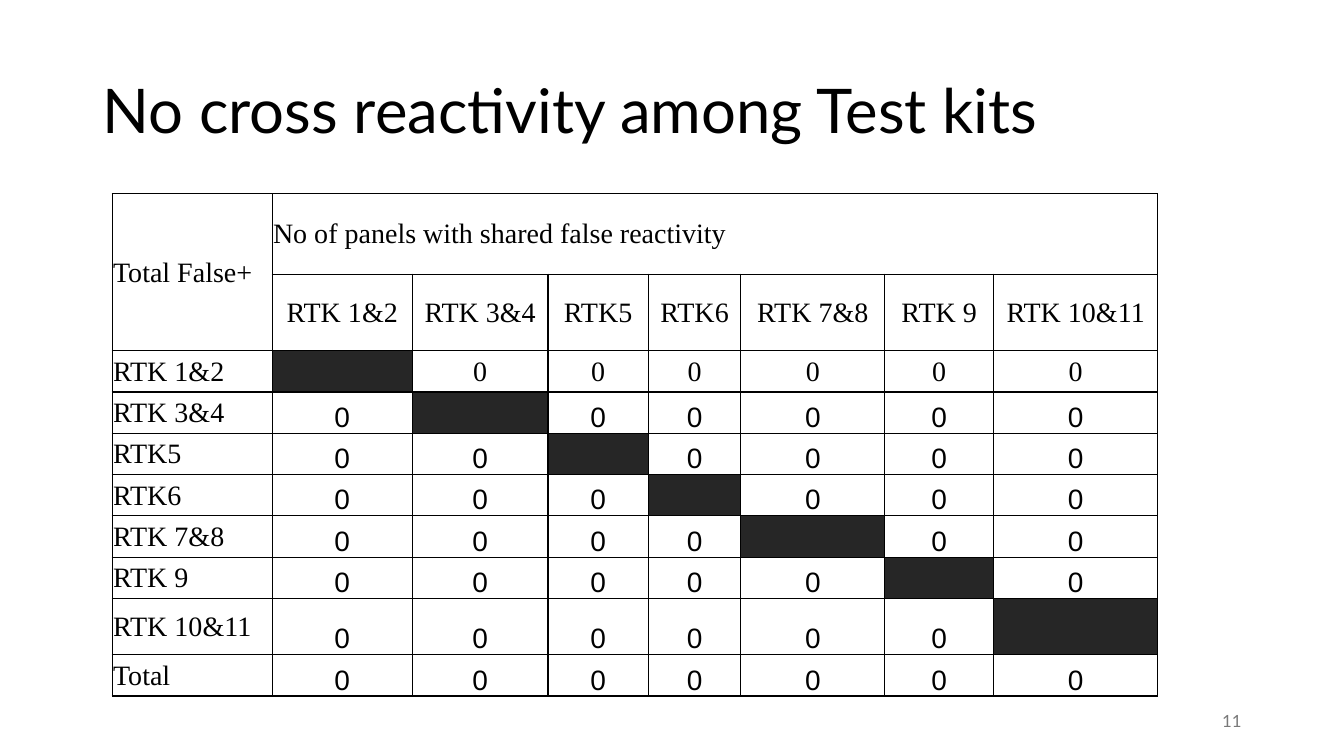
from dataclasses import dataclass
from lxml.etree import SubElement
from pptx import Presentation
from pptx.dml.color import RGBColor
from pptx.enum.text import MSO_ANCHOR, PP_ALIGN
from pptx.oxml.ns import qn
from pptx.util import Cm, Pt

TITLE = "No cross reactivity among Test kits"
CORNER = "Total False+"
SPAN = "No of panels with shared false reactivity"
KITS = ["RTK 1&2", "RTK 3&4", "RTK5", "RTK6", "RTK 7&8", "RTK 9", "RTK 10&11"]
# One row of counts per kit; None marks a kit against itself.
COUNTS = [
    (None, 0, 0, 0, 0, 0, 0),
    (0, None, 0, 0, 0, 0, 0),
    (0, 0, None, 0, 0, 0, 0),
    (0, 0, 0, None, 0, 0, 0),
    (0, 0, 0, 0, None, 0, 0),
    (0, 0, 0, 0, 0, None, 0),
    (0, 0, 0, 0, 0, 0, None),
]
TOTALS = (0, 0, 0, 0, 0, 0, 0)
PAGE = "11"

WIDTHS = [4.03, 3.53, 3.42, 2.53, 2.33, 3.63, 2.74, 4.14]
HEIGHTS = [2.03, 1.93] + [1.04] * 6 + [1.42, 1.04]


@dataclass(frozen=True)
class Theme:
    ink: RGBColor = RGBColor(0, 0, 0)
    paper: RGBColor = RGBColor(255, 255, 255)
    block: RGBColor = RGBColor(0x26, 0x26, 0x26)
    muted: RGBColor = RGBColor(0x79, 0x79, 0x79)
    head: str = "Lato"
    label: str = "Times New Roman"
    count: str = "Arial"
    big: Pt = Pt(44)
    mid: Pt = Pt(20)
    small: Pt = Pt(12)
    rule: Pt = Pt(1)


LOOK = Theme()


def write(frame, text, face, size, color, align):
    frame.text = text
    para = frame.paragraphs[0]
    para.alignment = align
    para.font.name = face
    para.font.size = size
    para.font.color.rgb = color
    return para


def style(cell, color):
    """Set the cell's thin margins, its four borders and its fill."""
    cell.margin_left = cell.margin_right = cell.margin_top = Cm(0.02)
    cell.margin_bottom = 0
    props = cell._tc.get_or_add_tcPr()
    for side in ("lnL", "lnR", "lnT", "lnB"):
        line = SubElement(props, qn(f"a:{side}"), w=str(LOOK.rule))
        fill = SubElement(line, qn("a:solidFill"))
        SubElement(fill, qn("a:srgbClr"), val=str(LOOK.ink))
    cell.fill.solid()
    cell.fill.fore_color.rgb = color


def put(cell, text, align, face=LOOK.label, anchor=MSO_ANCHOR.MIDDLE):
    write(cell.text_frame, text, face, LOOK.mid, LOOK.ink, align)
    cell.vertical_anchor = anchor


def fill_row(table, row, name, counts):
    put(table.cell(row, 0), name, PP_ALIGN.JUSTIFY)
    first = row == 2
    face = LOOK.label if first else LOOK.count
    anchor = MSO_ANCHOR.MIDDLE if first else MSO_ANCHOR.BOTTOM
    for col, count in enumerate(counts, 1):
        cell = table.cell(row, col)
        if count is None:
            cell.fill.fore_color.rgb = LOOK.block
        else:
            put(cell, str(count), PP_ALIGN.CENTER, face, anchor)


def add_grid(slide):
    table = slide.shapes.add_table(
        len(HEIGHTS), len(WIDTHS), Cm(2.83), Cm(4.88),
        Cm(sum(WIDTHS)), Cm(sum(HEIGHTS))).table
    table.first_row = table.horz_banding = False
    for col, width in zip(table.columns, WIDTHS):
        col.width = Cm(width)
    for row, height in zip(table.rows, HEIGHTS):
        row.height = Cm(height)
    for cell in table.iter_cells():
        style(cell, LOOK.paper)

    table.cell(0, 0).merge(table.cell(1, 0))
    table.cell(0, 1).merge(table.cell(0, len(KITS)))
    put(table.cell(0, 0), CORNER, PP_ALIGN.JUSTIFY)
    put(table.cell(0, 1), SPAN, PP_ALIGN.JUSTIFY)
    for col, kit in enumerate(KITS, 1):
        put(table.cell(1, col), kit, PP_ALIGN.CENTER)
    body = zip(KITS + ["Total"], COUNTS + [TOTALS])
    for row, (name, counts) in enumerate(body, 2):
        fill_row(table, row, name, counts)


def main():
    deck = Presentation()
    deck.slide_width, deck.slide_height = Cm(33.87), Cm(19.05)
    slide = deck.slides.add_slide(deck.slide_layouts[5])

    title = slide.shapes.title
    title.left, title.top = Cm(2.33), Cm(1.01)
    title.width, title.height = Cm(29.21), Cm(3.68)
    title.text_frame.vertical_anchor = MSO_ANCHOR.MIDDLE
    para = write(title.text_frame, TITLE, LOOK.head, LOOK.big, LOOK.ink,
                 PP_ALIGN.LEFT)
    para.line_spacing = 0.9

    add_grid(slide)

    page = slide.shapes.add_textbox(Cm(23.92), Cm(17.66), Cm(7.62), Cm(1.01))
    page.text_frame.word_wrap = True
    page.text_frame.vertical_anchor = MSO_ANCHOR.MIDDLE
    write(page.text_frame, PAGE, LOOK.head, LOOK.small, LOOK.muted,
          PP_ALIGN.RIGHT)
    deck.save("out.pptx")


if __name__ == "__main__":
    main()
